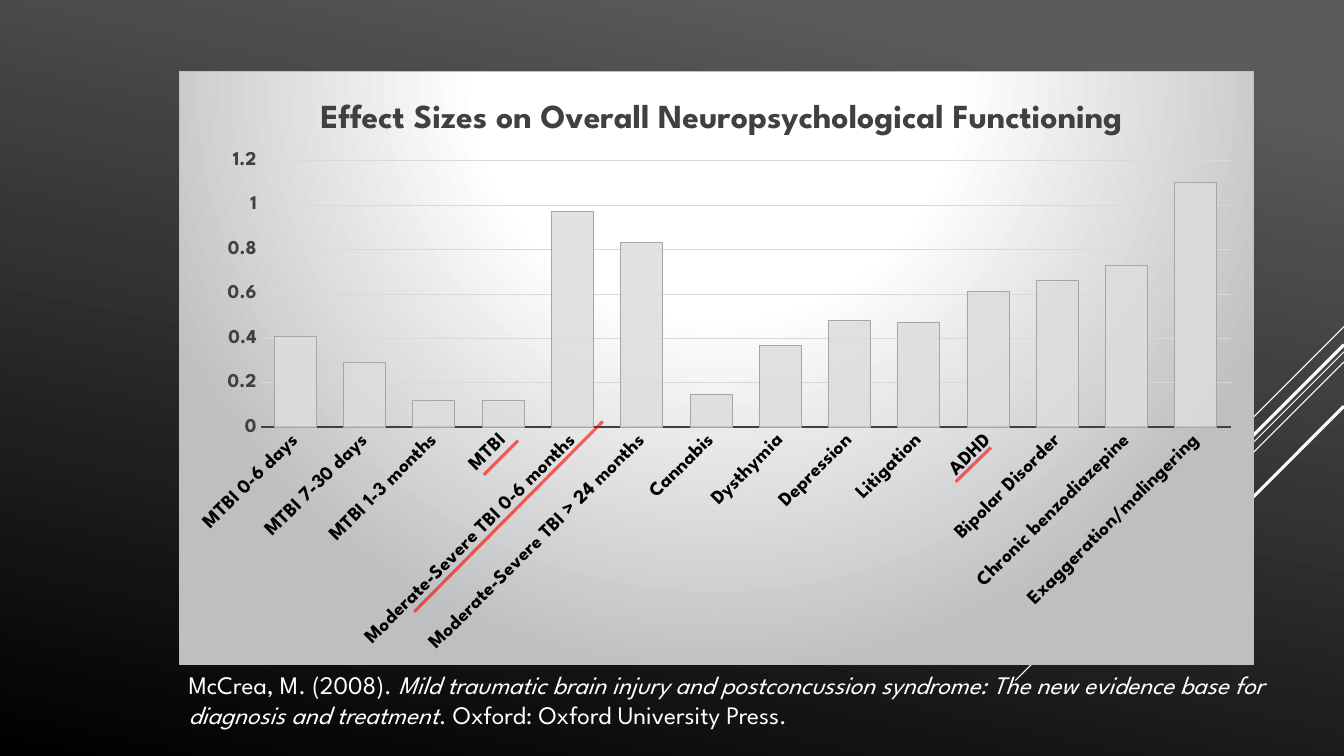
from lxml import etree
from pptx import Presentation
from pptx import util as u
from pptx.chart.data import CategoryChartData
from pptx.dml.color import RGBColor
from pptx.enum import chart as charts, shapes
from pptx.oxml import parse_xml
from pptx.oxml.ns import nsdecls, qn

# Content
FONT = "League Spartan"
WIDTH, HEIGHT = 960, 540
TITLE = "Effect Sizes on Overall Neuropsychological Functioning"
EFFECTS = [
    ("MTBI 0-6 days", 0.41),
    ("MTBI 7-30 days", 0.29),
    ("MTBI 1-3 months", 0.12),
    ("MTBI", 0.12),
    ("Moderate-Severe TBI 0-6 months", 0.97),
    ("Moderate-Severe TBI > 24 months", 0.83),
    ("Cannabis", 0.15),
    ("Dysthymia", 0.37),
    ("Depression", 0.48),
    ("Litigation", 0.47),
    ("ADHD", 0.61),
    ("Bipolar Disorder", 0.66),
    ("Chronic benzodiazepine", 0.73),
    ("Exaggeration/malingering", 1.1),
]
CITATION = [  # text, italic
    ("McCrea, M. (2008). ", False),
    ("Mild traumatic brain injury and postconcussion syndrome: "
     "The new evidence base for diagnosis and treatment", True),
    (". Oxford: Oxford University Press.", False),
]
BACKGROUND = [(0.1, "5B5B5B"), (1, "000000")]
PANEL_STOPS = [(0, "FFFFFF"), (39, "FFFFFF"), (100, "BFBFBF")]
# Diagonal rays from the right edge: start height, run, line width
RAYS = [(233.3, 72, 0.75), (251.3, 234.7, 0.75), (258.5, 149, 0.75),
        (246.2, 137.5, 2.25), (290.2, 100, 2.25)]
# Underlines: left, bottom, right, top
UNDERLINES = [(345.6, 339.1, 370.1, 314.6), (295.9, 437, 430.6, 301),
              (682.6, 344.2, 707.8, 319.7)]


def color(hex_string):
    return RGBColor.from_string(hex_string)


def set_font(font, size, hex_string, bold=None):
    font.name, font.size, font.bold = FONT, u.Pt(size), bold
    font.color.rgb = color(hex_string)


def set_line(line, hex_string, width):
    line.color.rgb = color(hex_string)
    line.width = u.Pt(width)


def set_alpha(properties, percent):
    for rgb in properties.findall(".//" + qn("a:srgbClr")):
        etree.SubElement(rgb, qn("a:alpha")).set("val", str(percent * 1000))


def add_line(page, ends, hex_string, width):
    line = page.shapes.add_connector(
        shapes.MSO_CONNECTOR.STRAIGHT, *[u.Pt(end) for end in ends])
    set_line(line.line, hex_string, width)
    etree.SubElement(line._element.spPr, qn("a:effectLst"))
    return line


def place(element, mode, **fractions):
    """Give a chart part a manual layout, in fractions of the chart."""
    for old in element.findall(qn("c:layout")):
        element.remove(old)
    target = '<c:layoutTarget val="inner"/>' if mode == "plot" else ""
    parts = [("xMode", "edge"), ("yMode", "edge"), *fractions.items()]
    values = "".join(f'<c:{name} val="{value}"/>' for name, value in parts)
    layout = parse_xml(f'<c:layout {nsdecls("c")}><c:manualLayout>{target}'
                       f'{values}</c:manualLayout></c:layout>')
    if mode == "plot":
        element.insert(0, layout)
    else:
        element.find(qn("c:tx")).addnext(layout)


deck = Presentation()
deck.slide_width, deck.slide_height = u.Pt(WIDTH), u.Pt(HEIGHT)
page = deck.slides.add_slide(deck.slide_layouts[6])

# Background
fill = page.background.fill
fill.gradient()
fill.gradient_angle = 258
for stop, (position, shade) in zip(fill.gradient_stops, BACKGROUND):
    stop.position = position
    stop.color.rgb = color(shade)

# Rays
for top, run, width in RAYS:
    add_line(page, (WIDTH, top, WIDTH - run, top + run), "FFFFFF", width)

# Chart
data = CategoryChartData()
data.categories = [name for name, _ in EFFECTS]
data.add_series("Series 1", [value for _, value in EFFECTS])
chart = page.shapes.add_chart(
    charts.XL_CHART_TYPE.COLUMN_CLUSTERED,
    u.Pt(127.6), u.Pt(51), u.Pt(768), u.Pt(424), data).chart
set_font(chart.font, 10, "FFFFFF")
chart.has_legend = False
chart.has_title = True
title = chart.chart_title
title.include_in_layout = False
title.text_frame.text = TITLE
set_font(title.text_frame.paragraphs[0].font, 24, "404040", True)
place(title._element, "title", x=0.126, y=0.04)
place(chart._chartSpace.chart.plotArea, "plot", x=0.076, y=0.15, w=0.903, h=0.45)

# Columns
plot = chart.plots[0]
plot.gap_width = 65
plot.vary_by_categories = False
columns = plot.series[0].format
columns.fill.solid()
columns.fill.fore_color.rgb = color("DDDDDD")
set_alpha(plot.series[0]._element.spPr, 85)
set_line(columns.line, "A6A6A6", 0.75)

# Axes
names, scale = chart.category_axis, chart.value_axis
for axis, shade in ((names, "000000"), (scale, "404040")):
    axis.major_tick_mark = axis.minor_tick_mark = charts.XL_TICK_MARK.NONE
    set_font(axis.tick_labels.font, 14, shade, True)
set_line(names.format.line, "404040", 1.5)
names._element.find(qn("c:txPr")).find(qn("a:bodyPr")).set("rot", "-2700000")
scale.minimum_scale, scale.maximum_scale, scale.major_unit = 0, 1.2, 0.2
scale.format.line.fill.background()
set_line(scale.major_gridlines.format.line, "D9D9D9", 0.75)

# Chart panel: radial gradient and border
stops = "".join(f'<a:gs pos="{pos * 1000}"><a:srgbClr val="{shade}"/></a:gs>'
                for pos, shade in PANEL_STOPS)
chart._chartSpace.chart.addnext(parse_xml(
    f'<c:spPr {nsdecls("c", "a")}><a:gradFill><a:gsLst>{stops}</a:gsLst>'
    '<a:path path="circle">'
    '<a:fillToRect l="50000" t="-80000" r="50000" b="180000"/></a:path>'
    '</a:gradFill><a:ln w="9525"><a:solidFill><a:srgbClr val="BFBFBF"/>'
    '</a:solidFill></a:ln></c:spPr>'))

# Citation
box = page.shapes.add_textbox(u.Pt(127.6), u.Pt(474.5), u.Pt(790.6), u.Pt(51))
box.text_frame.word_wrap = True
para = box.text_frame.paragraphs[0]
set_font(para.font, 18, "FFFFFF")
for words, italic in CITATION:
    span = para.add_run()
    span.text = words
    span.font.italic = italic

# Underlines
for ends in UNDERLINES:
    underline = add_line(page, ends, "FF0000", 2.25)
    set_alpha(underline._element.spPr, 60)

deck.save("out.pptx")
